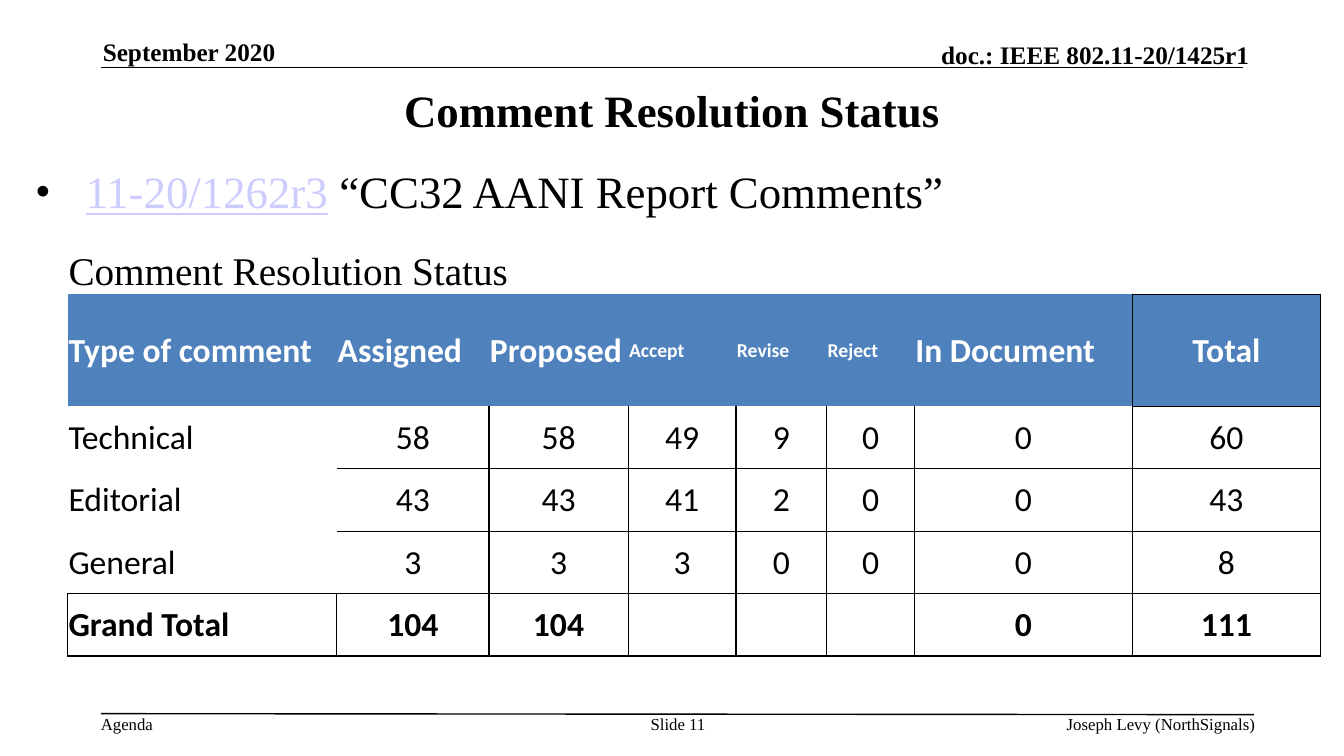
from dataclasses import dataclass

from lxml import etree
from pptx import Presentation
from pptx.dml.color import RGBColor
from pptx.enum.shapes import MSO_CONNECTOR
from pptx.enum.text import MSO_ANCHOR, MSO_AUTO_SIZE, PP_ALIGN
from pptx.oxml.ns import qn
from pptx.util import Inches, Pt

LEFT, CENTER, RIGHT = PP_ALIGN.LEFT, PP_ALIGN.CENTER, PP_ALIGN.RIGHT
TOP, MIDDLE, BOTTOM = MSO_ANCHOR.TOP, MSO_ANCHOR.MIDDLE, MSO_ANCHOR.BOTTOM
NO_AUTO_SIZE = MSO_AUTO_SIZE.NONE
STRAIGHT = MSO_CONNECTOR.STRAIGHT

SERIF, SANS = "Times New Roman", "Calibri"
BLACK, WHITE, LINK, HEADER_BLUE = "000000", "FFFFFF", "CCCCFF", "4F81BD"
PLAIN_TABLE_STYLE = "{2D5ABB26-0587-4C30-8999-92F81FD0307C}"

COLUMN_WIDTHS = [2.67, 1.51, 1.38, 1.07, 0.9, 0.87, 2.16, 1.87]
ROW_HEIGHTS = [0.67, 1.11, 0.62, 0.62, 0.62, 0.62]
STATUS_ROWS = [
    ["Comment Resolution Status"] + [""] * 7,
    ["Type of comment", "Assigned", "Proposed", "Accept", "Revise", "Reject",
     "In Document", "Total"],
    ["Technical", "58", "58", "49", "9", "0", "0", "60"],
    ["Editorial", "43", "43", "41", "2", "0", "0", "43"],
    ["General", "3", "3", "3", "0", "0", "0", "8"],
    ["Grand Total", "104", "104", "", "", "", "0", "111"],
]
CAPTION_ROW, HEADER_ROW, FIRST_DATA_ROW, TOTAL_ROW = 0, 1, 2, 5
TOTAL_COLUMN = 7
SMALL_HEADERS = ("Accept", "Revise", "Reject")


@dataclass
class Label:
    text: str
    left: float
    top: float
    width: float
    height: float
    size: int = 12
    bold: bool = False
    align: PP_ALIGN = LEFT
    anchor: MSO_ANCHOR = TOP
    wrap: bool = True


@dataclass
class Rule:
    x1: float
    y1: float
    x2: float
    y2: float


LABELS = [
    Label("September 2020", 1.02, 0.36, 2.73, 0.3, 18, True, LEFT, BOTTOM),
    Label("doc.: IEEE 802.11-20/1425r1", 7.29, 0.39, 5.1, 0.3, 18, True, RIGHT, BOTTOM),
    Label("Agenda", 1, 7.08, 0.52, 0.2, wrap=False),
    Label("Slide 11", 6.34, 7.08, 0.77, 0.4, align=CENTER),
    Label("Joseph Levy (NorthSignals)", 7.81, 7.08, 4.64, 0.2, align=RIGHT),
]
RULES = [Rule(1, 0.67, 12.33, 0.67), Rule(1, 7.08, 12.44, 7.09)]


def color(value: str) -> RGBColor:
    return RGBColor.from_string(value)


def set_font(font, name: str, size: int, value: str, bold: bool = False) -> None:
    font.name, font.size, font.bold = name, Pt(size), bold
    font.color.rgb = color(value)


def set_margins(target, left: float, top: float, right: float, bottom: float) -> None:
    target.margin_left, target.margin_top = Inches(left), Inches(top)
    target.margin_right, target.margin_bottom = Inches(right), Inches(bottom)


def add_label(page, label: Label) -> None:
    box = page.shapes.add_textbox(Inches(label.left), Inches(label.top),
                                  Inches(label.width), Inches(label.height))
    frame = box.text_frame
    frame.word_wrap, frame.vertical_anchor = label.wrap, label.anchor
    set_margins(frame, 0, 0, 0, 0)
    para = frame.paragraphs[0]
    para.text, para.alignment = label.text, label.align
    set_font(para.font, SERIF, label.size, BLACK, label.bold)


def add_rule(page, rule: Rule) -> None:
    line = page.shapes.add_connector(STRAIGHT, Inches(rule.x1), Inches(rule.y1),
                                     Inches(rule.x2), Inches(rule.y2))
    line.line.color.rgb, line.line.width = color(BLACK), Pt(1)
    etree.SubElement(line._element.spPr, qn("a:effectLst"))


def format_title(page) -> None:
    title = page.shapes.title
    title.left, title.top = Inches(1), Inches(0.75)
    title.width, title.height = Inches(11.33), Inches(0.67)
    frame = title.text_frame
    frame.auto_size, frame.vertical_anchor = NO_AUTO_SIZE, MIDDLE
    set_margins(frame, 0.1, 0.05, 0.1, 0.05)
    para = frame.paragraphs[0]
    para.text, para.alignment = "Comment Resolution Status", CENTER
    set_font(para.font, SERIF, 32, BLACK, True)


def add_bullet(page) -> None:
    box = page.shapes.add_textbox(Inches(0.25), Inches(1.58), Inches(12.75), Inches(5.5))
    box.text_frame.word_wrap = True
    para = box.text_frame.paragraphs[0]
    properties = para._p.get_or_add_pPr()
    properties.set("marL", str(Inches(0.5)))
    properties.set("indent", str(-Inches(0.5)))
    bullet_color = etree.SubElement(properties, qn("a:buClr"))
    etree.SubElement(bullet_color, qn("a:srgbClr"), val=BLACK)
    etree.SubElement(properties, qn("a:buFont"), typeface=SERIF)
    etree.SubElement(properties, qn("a:buChar"), char="•")
    for text, value in (("11-20/1262r3", LINK), (" “CC32 AANI Report Comments”", BLACK)):
        span = para.add_run()
        span.text = text
        set_font(span.font, SERIF, 32, value)
        span.font.underline = value == LINK


def cell_edges(row: int, column: int) -> str:
    """Sides of a cell that carry a line, in schema order."""
    if row == CAPTION_ROW:
        return "B" if column == TOTAL_COLUMN else ""
    if row == TOTAL_ROW or column == TOTAL_COLUMN:
        return "LRTB"
    if row == HEADER_ROW:
        return "R" if column == TOTAL_COLUMN - 1 else ""
    if column == 0:
        return "B" if row == TOTAL_ROW - 1 else ""
    left = "L" if column > 1 else ""
    top = "T" if row > FIRST_DATA_ROW else ""
    return left + "R" + top + "B"


def draw_edges(cell, edges: str) -> None:
    properties = cell._tc.get_or_add_tcPr()
    for side in edges:
        line = etree.SubElement(properties, qn(f"a:ln{side}"), w=str(Pt(1)))
        fill = etree.SubElement(line, qn("a:solidFill"))
        etree.SubElement(fill, qn("a:srgbClr"), val=BLACK)


def fill_cell(cell, row: int, column: int, text: str) -> None:
    is_caption, is_header = row == CAPTION_ROW, row == HEADER_ROW
    draw_edges(cell, cell_edges(row, column))
    if is_header:
        cell.fill.solid()
        cell.fill.fore_color.rgb = color(HEADER_BLUE)
    else:
        cell.fill.background()
    set_margins(cell, 0.01, 0.01, 0.01, 0)
    cell.vertical_anchor = BOTTOM if is_caption else MIDDLE
    if not text:
        return
    para = cell.text_frame.paragraphs[0]
    para.text = text
    centered = column == TOTAL_COLUMN or (row >= FIRST_DATA_ROW and column > 0)
    para.alignment = CENTER if centered else LEFT
    size = 28 if is_caption else 14 if text in SMALL_HEADERS else 24
    set_font(para.font, SERIF if is_caption else SANS, size,
             WHITE if is_header else BLACK, row in (HEADER_ROW, TOTAL_ROW))


def add_status_table(page) -> None:
    frame = page.shapes.add_table(len(ROW_HEIGHTS), len(COLUMN_WIDTHS),
                                  Inches(0.67), Inches(2.25),
                                  Inches(sum(COLUMN_WIDTHS)), Inches(sum(ROW_HEIGHTS)))
    table = frame.table
    table.first_row = table.horz_banding = False
    table._tbl.tblPr.find(qn("a:tableStyleId")).text = PLAIN_TABLE_STYLE
    for column, width in zip(table.columns, COLUMN_WIDTHS):
        column.width = Inches(width)
    for row, height in zip(table.rows, ROW_HEIGHTS):
        row.height = Inches(height)
    for row, texts in enumerate(STATUS_ROWS):
        for column, text in enumerate(texts):
            fill_cell(table.cell(row, column), row, column, text)
    table.cell(CAPTION_ROW, 0).merge(table.cell(CAPTION_ROW, 2))


def main() -> None:
    deck = Presentation()
    deck.slide_width, deck.slide_height = Inches(13.33), Inches(7.5)
    page = deck.slides.add_slide(deck.slide_layouts[5])

    # Header and footer
    for rule in RULES:
        add_rule(page, rule)
    for label in LABELS:
        add_label(page, label)

    # Content
    format_title(page)
    add_bullet(page)
    add_status_table(page)
    deck.save("out.pptx")


if __name__ == "__main__":
    main()
